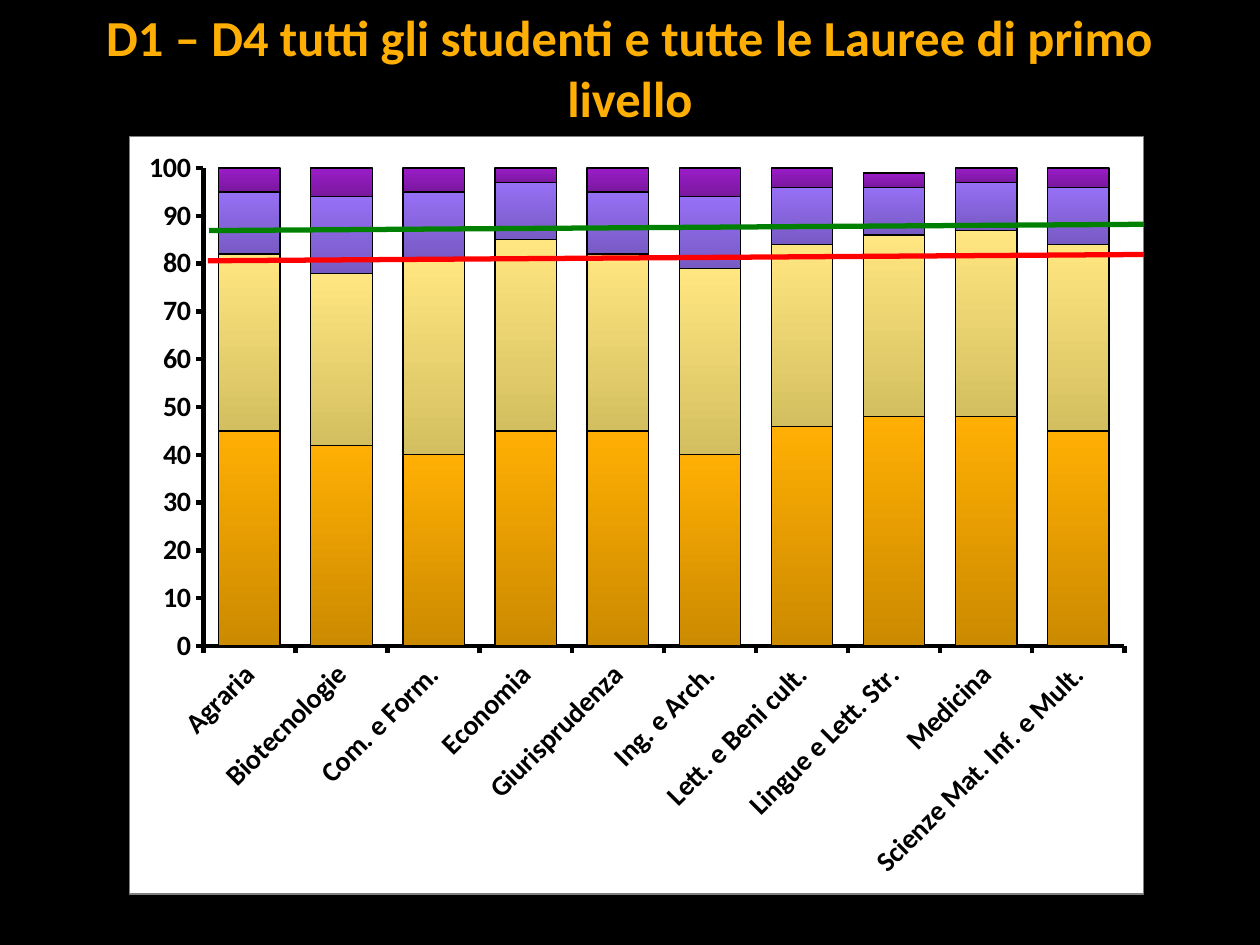
"""Build a slide with a stacked column chart of student answers by faculty."""
from lxml import etree
from pptx import Presentation
from pptx.chart.data import CategoryChartData
from pptx.dml.color import RGBColor
from pptx.enum.chart import XL_CHART_TYPE as ChartType, XL_TICK_MARK as Tick
from pptx.enum.shapes import MSO_CONNECTOR as Connector
from pptx.enum.text import MSO_ANCHOR as Anchor, PP_ALIGN as Align
from pptx.oxml import parse_xml
from pptx.oxml.ns import nsdecls, qn
from pptx.util import Inches, Pt

COLORS = {
    "background": "000000", "title": "FFAF03", "ink": "000000",
    "panel": "FFFFFF", "border": "808080", "green": "008000", "red": "FF0000",
}
CHART_BOX = (1.02, 1.08, 8.06, 6.02)
PLOT_BOX = (0.59, 0.25, 7.32, 3.8)
FACULTIES = [
    "Agraria", "Biotecnologie", "Com. e Form.", "Economia", "Giurisprudenza",
    "Ing. e Arch.", "Lett. e Beni cult.", "Lingue e Lett. Str.", "Medicina",
    "Scienze Mat. Inf. e Mult.",
]
SERIES = [
    ("Series 1", [45, 42, 40, 45, 45, 40, 46, 48, 48, 45], "FFAF03", "CC8A00"),
    ("Series 2", [37, 36, 41, 40, 37, 39, 38, 38, 39, 39], "FFE680", "D4BF60"),
    ("Series 3", [13, 16, 14, 12, 13, 15, 12, 10, 10, 12], "9670F5", "785AC4"),
    ("Series 4", [5, 6, 5, 4, 5, 6, 4, 3, 4, 4], "9A1CC8", "7A189E"),
]


def rgb(name):
    return RGBColor.from_string(COLORS[name])


def set_line(line, color, width):
    line.color.rgb = rgb(color)
    line.width = Pt(width)


def add_title(s, text):
    sp = s.shapes.title
    sp.left, sp.top, sp.width, sp.height = map(Inches, (0.67, 0, 8.66, 0.86))
    tf = sp.text_frame
    tf.text = text
    tf.word_wrap = True
    tf.vertical_anchor = Anchor.TOP
    tf.margin_top = Inches(0.05)
    p = tf.paragraphs[0]
    p.alignment = Align.CENTER
    p.font.name, p.font.size, p.font.bold = "Calibri", Pt(28.8), True
    p.font.color.rgb = rgb("title")


def style_axis(axis):
    axis.has_major_gridlines = False
    axis.major_tick_mark = Tick.OUTSIDE
    set_line(axis.format.line, "ink", 2.5)
    font = axis.tick_labels.font
    font.name, font.size, font.bold = "Calibri", Pt(16), True
    font.color.rgb = rgb("ink")


def style_series(series, top, bottom):
    fill = series.format.fill
    fill.gradient()
    fill.gradient_angle = 270
    for stop, color in zip(fill.gradient_stops, (top, bottom)):
        stop.color.rgb = RGBColor.from_string(color)
    set_line(series.format.line, "ink", 0.75)


def set_panel(chart):
    chart_xml = chart._chartSpace.find(qn("c:chart"))
    chart_xml.addnext(parse_xml(
        f'<c:spPr {nsdecls("c", "a")}>'
        f'<a:solidFill><a:srgbClr val="{COLORS["panel"]}"/></a:solidFill>'
        f'<a:ln w="{Pt(0.75)}"><a:solidFill><a:srgbClr val="{COLORS["border"]}"/>'
        '</a:solidFill></a:ln></c:spPr>'))


def set_plot_area(chart):
    area = chart._chartSpace.find(qn("c:chart")).find(qn("c:plotArea"))
    for old in area.findall(qn("c:layout")):
        area.remove(old)
    sizes = CHART_BOX[2:] * 2
    values = [("layoutTarget", "inner"), ("xMode", "edge"), ("yMode", "edge")]
    values += [(tag, part / whole)
               for tag, part, whole in zip("xywh", PLOT_BOX, sizes)]
    items = "".join(f'<c:{tag} val="{value}"/>' for tag, value in values)
    area.insert(0, parse_xml(
        f'<c:layout {nsdecls("c")}><c:manualLayout>{items}'
        '</c:manualLayout></c:layout>'))


def add_chart(s):
    data = CategoryChartData()
    data.categories = FACULTIES
    for name, values, _, _ in SERIES:
        data.add_series(name, values)
    box = map(Inches, CHART_BOX)
    chart = s.shapes.add_chart(ChartType.COLUMN_STACKED, *box, data).chart
    chart.has_legend = chart.has_title = False
    chart.font.name, chart.font.size, chart.font.bold = "Quicksand", Pt(18), True
    chart.font.color.rgb = rgb("ink")
    plot = chart.plots[0]
    plot.gap_width, plot.overlap, plot.vary_by_categories = 50, 100, False
    for series, (_, _, top, bottom) in zip(plot.series, SERIES):
        style_series(series, top, bottom)
    style_axis(chart.category_axis)
    style_axis(chart.value_axis)
    labels = chart.category_axis._element.find(qn("c:txPr"))
    labels.find(qn("a:bodyPr")).set("rot", "-2700000")
    axis = chart.value_axis
    axis.minimum_scale, axis.maximum_scale, axis.major_unit = 0, 100, 10
    set_panel(chart)
    set_plot_area(chart)


def add_line(s, start, end, color):
    line = s.shapes.add_connector(
        Connector.STRAIGHT, *map(Inches, start + end))
    set_line(line.line, color, 3)
    etree.SubElement(line._element.spPr, qn("a:effectLst"))


def main():
    prs = Presentation()
    prs.slide_width, prs.slide_height = Inches(10), Inches(7.5)
    s = prs.slides.add_slide(prs.slide_layouts[5])
    s.background.fill.solid()
    s.background.fill.fore_color.rgb = rgb("background")
    add_title(s, "D1 – D4 tutti gli studenti e tutte le Lauree di primo livello")
    add_chart(s)
    add_line(s, (1.66, 1.83), (9.08, 1.78), "green")
    add_line(s, (1.65, 2.07), (9.08, 2.02), "red")
    prs.save("out.pptx")


if __name__ == "__main__":
    main()
